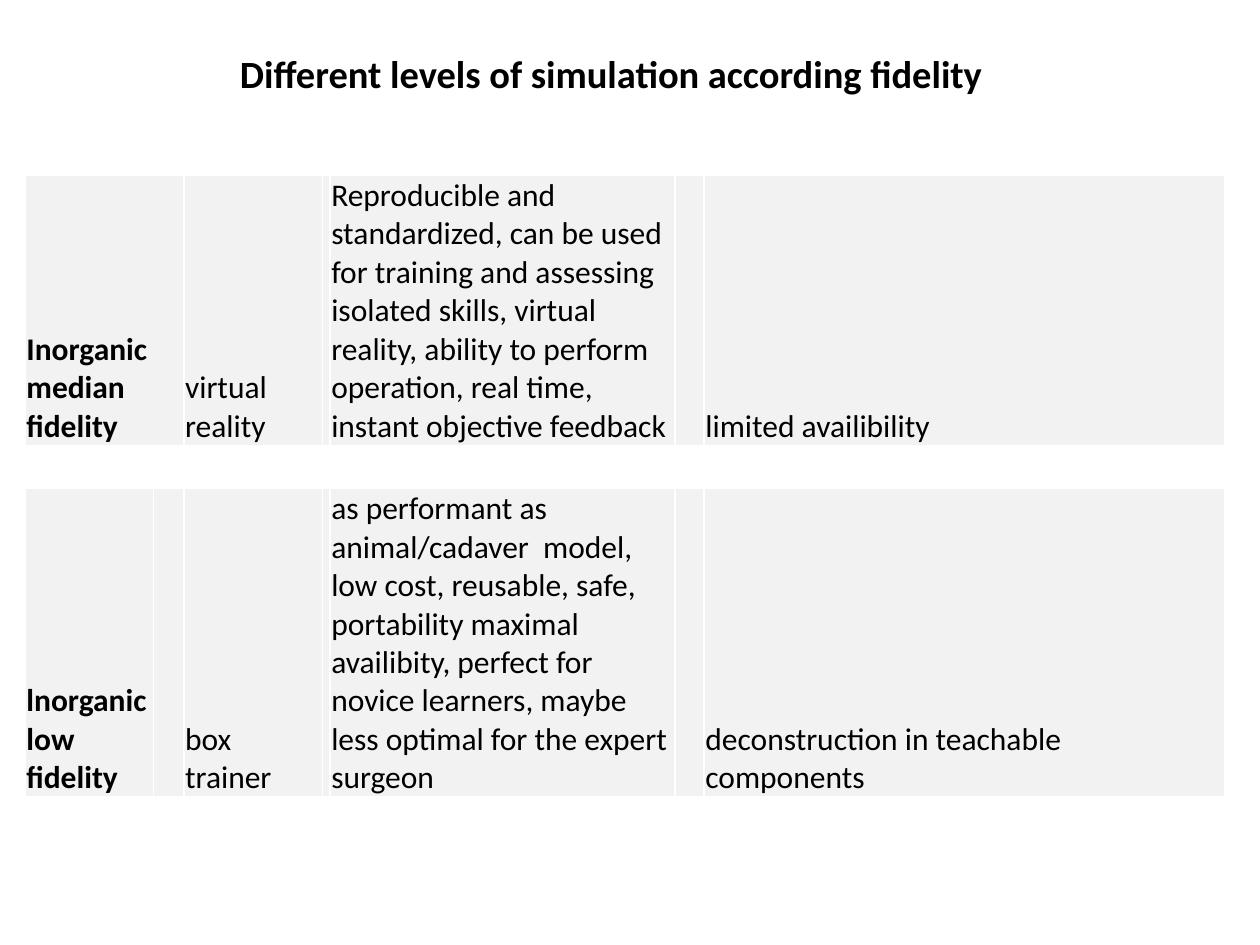
from pptx import Presentation
from pptx.dml.color import RGBColor
from pptx.enum.text import MSO_ANCHOR, PP_ALIGN
from pptx.util import Inches, Pt

COL_WIDTHS = [1.02, 0.24, 1.1, 0.06, 2.74, 0.23, 4.13]
ROW_HEIGHTS = [2.14, 0.34, 2.45, 0.34]
TEXT_COLS = [0, 2, 4, 6]
LEVELS = {
    0: ["Inorganic\nmedian fidelity", "virtual reality",
        "Reproducible and standardized, can be used for training and assessing "
        "isolated skills, virtual reality, ability to perform operation, real time, "
        "instant objective feedback",
        "limited availibility"],
    2: ["lnorganic\nlow fidelity", "box trainer",
        "as performant as animal/cadaver  model, low cost, reusable, safe, "
        "portability maximal availibity, perfect for novice learners, maybe less "
        "optimal for the expert surgeon",
        "deconstruction in teachable components"],
}
MERGED_ROWS = [0, 1]


def rgb(hex_color):
    return RGBColor.from_string(hex_color)


class SlideBuilder:
    font = "Calibri"
    ink = "000000"
    band = "F2F2F2"
    cell_format = {
        "vertical_anchor": MSO_ANCHOR.BOTTOM,
        "margin_left": Inches(0.01),
        "margin_right": Inches(0.01),
        "margin_top": Inches(0.01),
        "margin_bottom": 0,
    }

    def __init__(self, slide):
        self.s = slide

    def set_text(self, tf, text, size, bold=False, align=None):
        """Fill a text frame, one paragraph per line of text."""
        tf.text = text
        for p in tf.paragraphs:
            p.alignment = align
            for r in p.runs:
                values = {"name": self.font, "size": Pt(size), "bold": bold}
                for name, value in values.items():
                    setattr(r.font, name, value)
                r.font.color.rgb = rgb(self.ink)

    def title(self, text, x, y, w, h):
        sp = self.s.shapes.add_textbox(Inches(x), Inches(y), Inches(w), Inches(h))
        tf = sp.text_frame
        tf.word_wrap = True
        tf.vertical_anchor = MSO_ANCHOR.MIDDLE
        self.set_text(tf, text, 22, bold=True, align=PP_ALIGN.CENTER)

    def table(self, x, y, widths, heights, texts, merged_rows):
        """Draw shaded rows from texts, which maps a row to its cell texts."""
        tbl = self.s.shapes.add_table(
            len(heights), len(widths), Inches(x), Inches(y),
            Inches(sum(widths)), Inches(sum(heights))).table
        tbl.first_row = tbl.horz_banding = False
        for col, width in zip(tbl.columns, widths):
            col.width = Inches(width)
        for i, (row, height) in enumerate(zip(tbl.rows, heights)):
            row.height = Inches(height)
            for cell in row.cells:
                self.style_cell(cell, i in texts)
        for i, row_texts in texts.items():
            for j, text in zip(TEXT_COLS, row_texts):
                self.set_text(tbl.cell(i, j).text_frame, text, 18, bold=j == 0)
        for i in merged_rows:
            tbl.cell(i, 0).merge(tbl.cell(i, 1))

    def style_cell(self, cell, shaded):
        for name, value in self.cell_format.items():
            setattr(cell, name, value)
        if shaded:
            cell.fill.solid()
            cell.fill.fore_color.rgb = rgb(self.band)
        else:
            cell.fill.background()


def main():
    prs = Presentation()
    prs.slide_width, prs.slide_height = Inches(10), Inches(7.5)
    s = SlideBuilder(prs.slides.add_slide(prs.slide_layouts[6]))
    s.table(0.2, 1.39, COL_WIDTHS, ROW_HEIGHTS, LEVELS, MERGED_ROWS)
    s.title("Different levels of simulation according fidelity", 0.35, 0.24, 9, 0.68)
    prs.save("out.pptx")


if __name__ == "__main__":
    main()
